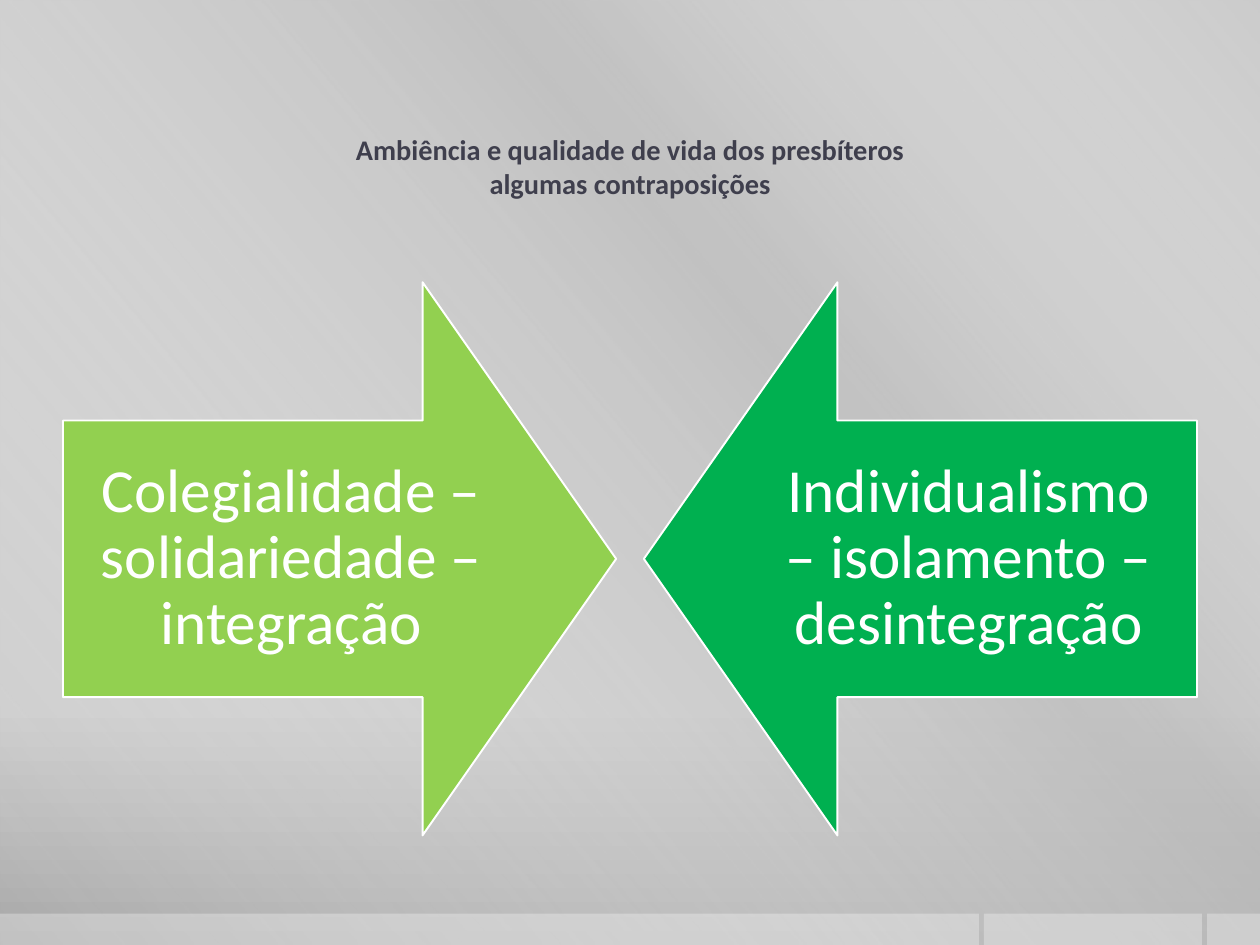
from lxml.etree import SubElement
from pptx import Presentation
from pptx.dml.color import RGBColor
from pptx.enum.shapes import MSO_SHAPE
from pptx.enum.text import MSO_ANCHOR, PP_ALIGN
from pptx.oxml import parse_xml
from pptx.oxml.ns import nsdecls, qn
from pptx.util import Inches, Pt

WIDTH, HEIGHT = 10, 7.5
MARGIN = 0.05 * WIDTH
WHITE = "FFFFFF"


def rgb(value):
    """Turn a hex string into a colour."""
    return RGBColor.from_string(value)


def gradient_fill(fill, owner, stops, angle):
    """Fill with (position, colour, opacity) stops, all in percent, at an angle in degrees."""
    fill.solid()
    solid = owner.find(".//" + qn("a:solidFill"))
    stops_xml = "".join(
        f'<a:gs pos="{position * 1000}"><a:srgbClr val="{color}">'
        f'<a:alpha val="{opacity * 1000}"/></a:srgbClr></a:gs>'
        for position, color, opacity in stops)
    gradient = parse_xml(
        f'<a:gradFill {nsdecls("a")} rotWithShape="1"><a:gsLst>{stops_xml}</a:gsLst>'
        f'<a:lin ang="{angle * 60000}" scaled="0"/></a:gradFill>')
    solid.getparent().replace(solid, gradient)


def add_panel(slide, kind, box):
    """Add a preset shape without shadow or outline."""
    panel = slide.shapes.add_shape(kind, *map(Inches, box))
    panel.shadow.inherit = False
    panel.line.fill.background()
    return panel


def add_text(slide, box, lines, size, color, inset=0, bold=False, anchor=MSO_ANCHOR.MIDDLE):
    """Add a centred, wrapped text box and return its paragraph."""
    frame = slide.shapes.add_textbox(*map(Inches, box)).text_frame
    frame.word_wrap = True
    frame.vertical_anchor = anchor
    frame.margin_left = frame.margin_right = Inches(inset)
    frame.margin_top = frame.margin_bottom = Inches(inset)
    paragraph = frame.paragraphs[0]
    paragraph.alignment = PP_ALIGN.CENTER
    for index, line in enumerate(lines):
        if index:
            paragraph.add_line_break()
        run = paragraph.add_run()
        run.text = line
        run.font.name = "Calibri"
        run.font.size = Pt(size)
        run.font.bold = bold
        run.font.color.rgb = rgb(color)
    return paragraph


def draw_backdrop(slide, box):
    """Paint the grey background, its diagonal sheen and the footer strip."""
    background = slide.background.fill
    gradient_fill(background, slide.element,
                  [(0, "CBCBCB", 100), (76, "C8C8C8", 100), (100, "A7A7A7", 100)], 90)
    sheen = add_panel(slide, MSO_SHAPE.RECTANGLE, box)
    gradient_fill(sheen.fill, sheen.element,
                  [(0, WHITE, 0), (34, "BFBFBF", 61), (38, "BFBFBF", 76), (100, WHITE, 0)], 140)
    left, top, width, height = box
    strip = height / 30
    for start, end in ((0.958, 1), (0.781, 0.954), (0, 0.777)):
        tile = add_panel(slide, MSO_SHAPE.RECTANGLE,
                         (left + start * width, top + height - strip, (end - start) * width, strip))
        tile.fill.solid()
        tile.fill.fore_color.rgb = rgb(WHITE)
        tint = tile.element.find(".//" + qn("a:srgbClr"))
        SubElement(tint, qn("a:alpha")).set("val", "30000")


def draw_title(slide, box):
    """Write the two-line heading."""
    add_text(slide, box,
             ["Ambiência e qualidade de vida dos presbíteros", "algumas contraposições"],
             16.2, "3F3F4D", bold=True, anchor=MSO_ANCHOR.TOP)


def draw_arrow(slide, box, points_right, color, label):
    """Draw one sideways arrow with its label over the shaft."""
    left, top, side, _ = box
    arrow = add_panel(slide, MSO_SHAPE.DOWN_ARROW, box)
    arrow.rotation = 270 if points_right else 90
    arrow.adjustments[0] = 0.5
    arrow.adjustments[1] = 0.35
    arrow.fill.solid()
    arrow.fill.fore_color.rgb = rgb(color)
    arrow.line.color.rgb = rgb(WHITE)
    arrow.line.width = Pt(1.1)
    label_width = 0.825 * side
    label_left = left if points_right else left + side - label_width
    paragraph = add_text(slide, (label_left, top + side / 4, label_width, side / 2),
                         [label], 35, WHITE, inset=0.27)
    paragraph.line_spacing = 0.9


def draw_contrast(slide, box):
    """Set two arrows facing each other at the ends of the box."""
    left, top, width, side = box
    draw_arrow(slide, (left, top, side, side), True, "92D050",
               "Colegialidade – solidariedade – integração")
    draw_arrow(slide, (left + width - side, top, side, side), False, "00B050",
               "Individualismo – isolamento – desintegração")


def main():
    """Build the slide and save it."""
    deck = Presentation()
    deck.slide_width, deck.slide_height = Inches(WIDTH), Inches(HEIGHT)
    slide = deck.slides.add_slide(deck.slide_layouts[6])
    content_width = WIDTH - 2 * MARGIN
    draw_backdrop(slide, (0, 0, WIDTH, HEIGHT))
    draw_title(slide, (MARGIN, 0.14 * HEIGHT, content_width, 1))
    draw_contrast(slide, (MARGIN, 2.24, content_width, 4.39))
    deck.save("out.pptx")


if __name__ == "__main__":
    main()
